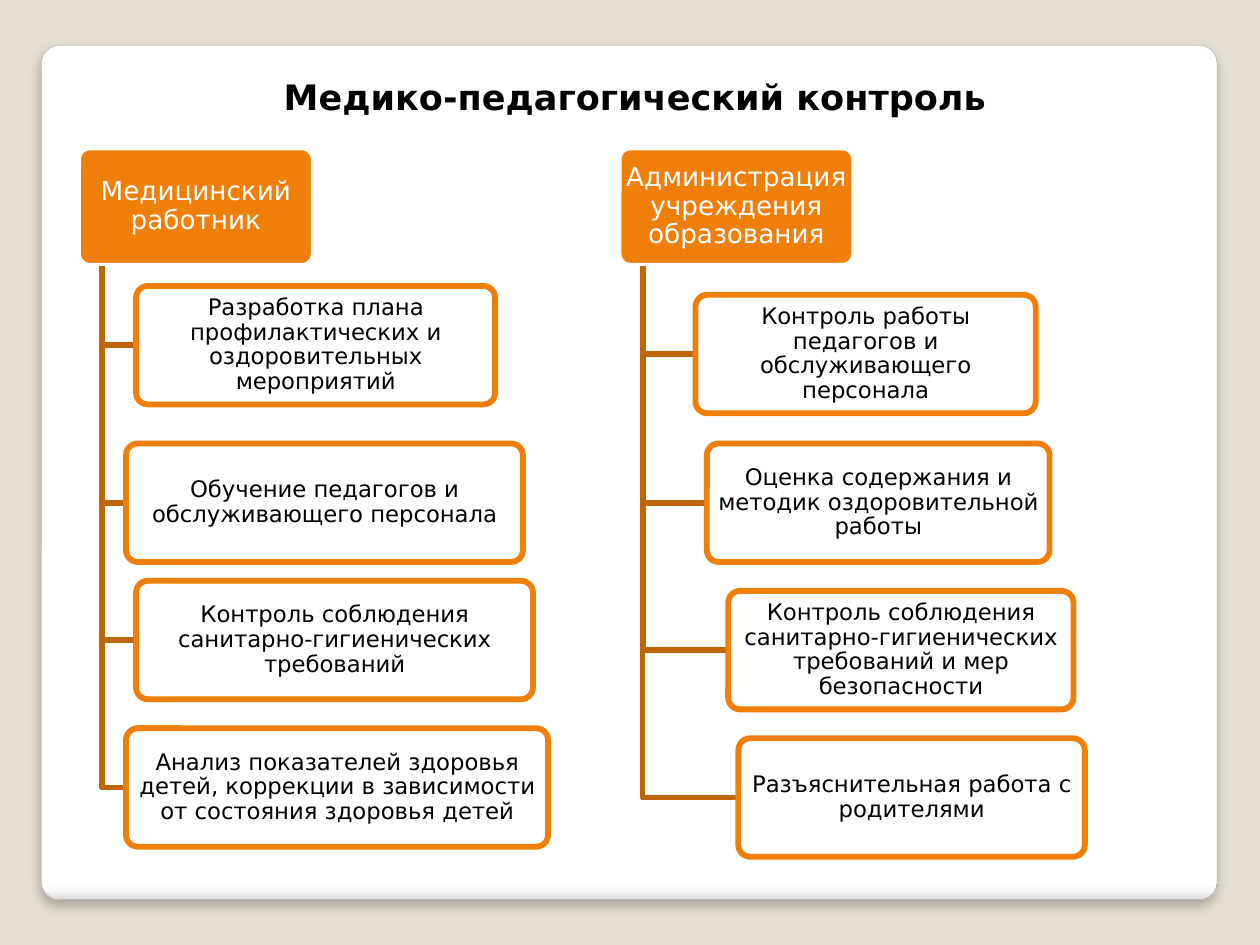
from dataclasses import dataclass

from pptx import Presentation
from pptx.dml.color import RGBColor
from pptx.enum.shapes import MSO_SHAPE as Shape
from pptx.enum.text import MSO_ANCHOR as Anchor, PP_ALIGN as Align
from pptx.oxml import parse_xml
from pptx.oxml.ns import nsdecls, qn
from pptx.util import Inches, Pt

BACKGROUND = RGBColor(0xE3, 0xDE, 0xD1)
PANEL_EDGE = RGBColor(0xA4, 0xA4, 0xA4)
ORANGE = RGBColor(0xF0, 0x7F, 0x09)
BROWN = RGBColor(0xC0, 0x66, 0x07)
WHITE = RGBColor(0xFF, 0xFF, 0xFF)
BLACK = RGBColor(0x00, 0x00, 0x00)
FONT = "DejaVu Sans"

BOX_H = 0.94
HEAD_W = 1.87
HEAD_TOP = 1.17
TRUNK_OFFSET = 0.19
LINE_W = Pt(3.35)
PANEL_STOPS = [(0, "FFFFFF"), (98, "FFFFFF"), (99, "F7F7F7"), (100, "DADADA")]


@dataclass
class Task:
    left: float
    top: float
    width: float
    text: str


@dataclass
class Branch:
    left: float
    head: str
    tasks: list[Task]


BRANCHES = [
    Branch(0.62, "Медицинский работник", [
        Task(1.08, 2.27, 2.85, "Разработка плана профилактических и оздоровительных мероприятий"),
        Task(1, 3.52, 3.15, "Обучение педагогов и обслуживающего персонала"),
        Task(1.08, 4.61, 3.15, "Контроль соблюдения санитарно-гигиенических требований"),
        Task(1, 5.78, 3.35,
             "Анализ показателей здоровья детей, коррекции в зависимости от состояния здоровья детей"),
    ]),
    Branch(4.91, "Администрация учреждения образования", [
        Task(5.52, 2.34, 2.7, "Контроль работы педагогов и обслуживающего персонала"),
        Task(5.61, 3.52, 2.72, "Оценка содержания и методик оздоровительной работы"),
        Task(5.78, 4.69, 2.74,
             "Контроль соблюдения санитарно-гигиенических требований и мер безопасности"),
        Task(5.86, 5.86, 2.75, "Разъяснительная работа с родителями"),
    ]),
]


def add_panel(s) -> None:
    """White rounded panel with a shaded lower edge and a soft shadow."""
    sp = s.shapes.add_shape(Shape.ROUNDED_RECTANGLE, Inches(0.33), Inches(0.36),
                            Inches(9.33), Inches(6.78))
    sp.adjustments[0] = 0.021
    sp.fill.gradient()
    sp.line.color.rgb = PANEL_EDGE
    sp.line.width = Pt(0.16)
    sp.shadow.inherit = False
    props = sp._element.spPr
    stops = "".join(f'<a:gs pos="{pos * 1000}"><a:srgbClr val="{color}"/></a:gs>'
                    for pos, color in PANEL_STOPS)
    props.replace(props.find(qn("a:gradFill")), parse_xml(
        f'<a:gradFill {nsdecls("a")} rotWithShape="1"><a:gsLst>{stops}</a:gsLst>'
        '<a:lin ang="5400000" scaled="0"/></a:gradFill>'))
    props.find(qn("a:effectLst")).append(parse_xml(
        f'<a:outerShdw {nsdecls("a")} blurRad="{Pt(6)}" dist="{Pt(4)}" dir="5400000" '
        'algn="t" rotWithShape="0"><a:srgbClr val="000000"><a:alpha val="25000"/>'
        '</a:srgbClr></a:outerShdw>'))


def add_box(s, left: float, top: float, width: float, text: str, size: int,
            fill: RGBColor, line: RGBColor, color: RGBColor, alpha: int = 100) -> None:
    sp = s.shapes.add_shape(Shape.ROUNDED_RECTANGLE, Inches(left), Inches(top),
                            Inches(width), Inches(BOX_H))
    sp.adjustments[0] = 0.1
    sp.shadow.inherit = False
    sp.fill.solid()
    sp.fill.fore_color.rgb = fill
    if alpha < 100:
        rgb = sp._element.spPr.find(qn("a:solidFill")).find(qn("a:srgbClr"))
        rgb.append(parse_xml(f'<a:alpha {nsdecls("a")} val="{alpha * 1000}"/>'))
    sp.line.color.rgb = line
    sp.line.width = LINE_W
    tf = sp.text_frame
    tf.word_wrap = True
    tf.vertical_anchor = Anchor.MIDDLE
    # The rounded corners add about 0.03 inch to each inset
    tf.margin_left = tf.margin_right = Inches(0.03)
    tf.margin_top = tf.margin_bottom = Inches(0.02)
    p = tf.paragraphs[0]
    p.line_spacing = 0.9
    write(p, text, size, color)


def write(p, text: str, size: int, color: RGBColor, bold: bool = False) -> None:
    p.text = text
    p.alignment = Align.CENTER
    p.font.name = FONT
    p.font.size = Pt(size)
    p.font.bold = bold
    p.font.color.rgb = color


def add_elbow(s, x: float, top: float, right: float, bottom: float) -> None:
    """Line down the trunk, then across to a task box."""
    builder = s.shapes.build_freeform(Inches(x), Inches(top))
    builder.add_line_segments([(Inches(x), Inches(bottom)),
                               (Inches(right), Inches(bottom))], close=False)
    sp = builder.convert_to_shape()
    sp.fill.background()
    sp.line.color.rgb = BROWN
    sp.line.width = LINE_W
    sp.shadow.inherit = False


def add_branch(s, branch: Branch) -> None:
    add_box(s, branch.left, HEAD_TOP, HEAD_W, branch.head, 15, ORANGE, WHITE, WHITE)
    for task in branch.tasks:
        add_elbow(s, branch.left + TRUNK_OFFSET, HEAD_TOP + BOX_H,
                  task.left, task.top + BOX_H / 2)
        add_box(s, task.left, task.top, task.width, task.text, 13,
                WHITE, ORANGE, BLACK, alpha=90)


def add_title(s, text: str) -> None:
    box = s.shapes.add_textbox(Inches(0.47), Inches(0.55), Inches(9.14), Inches(0.44))
    box.text_frame.word_wrap = True
    write(box.text_frame.paragraphs[0], text, 20, BLACK, bold=True)


def main() -> None:
    prs = Presentation()
    prs.slide_width, prs.slide_height = Inches(10), Inches(7.5)
    s = prs.slides.add_slide(prs.slide_layouts[6])
    s.background.fill.solid()
    s.background.fill.fore_color.rgb = BACKGROUND

    add_panel(s)
    for branch in BRANCHES:
        add_branch(s, branch)
    add_title(s, "Медико-педагогический контроль")
    prs.save("out.pptx")


if __name__ == "__main__":
    main()
